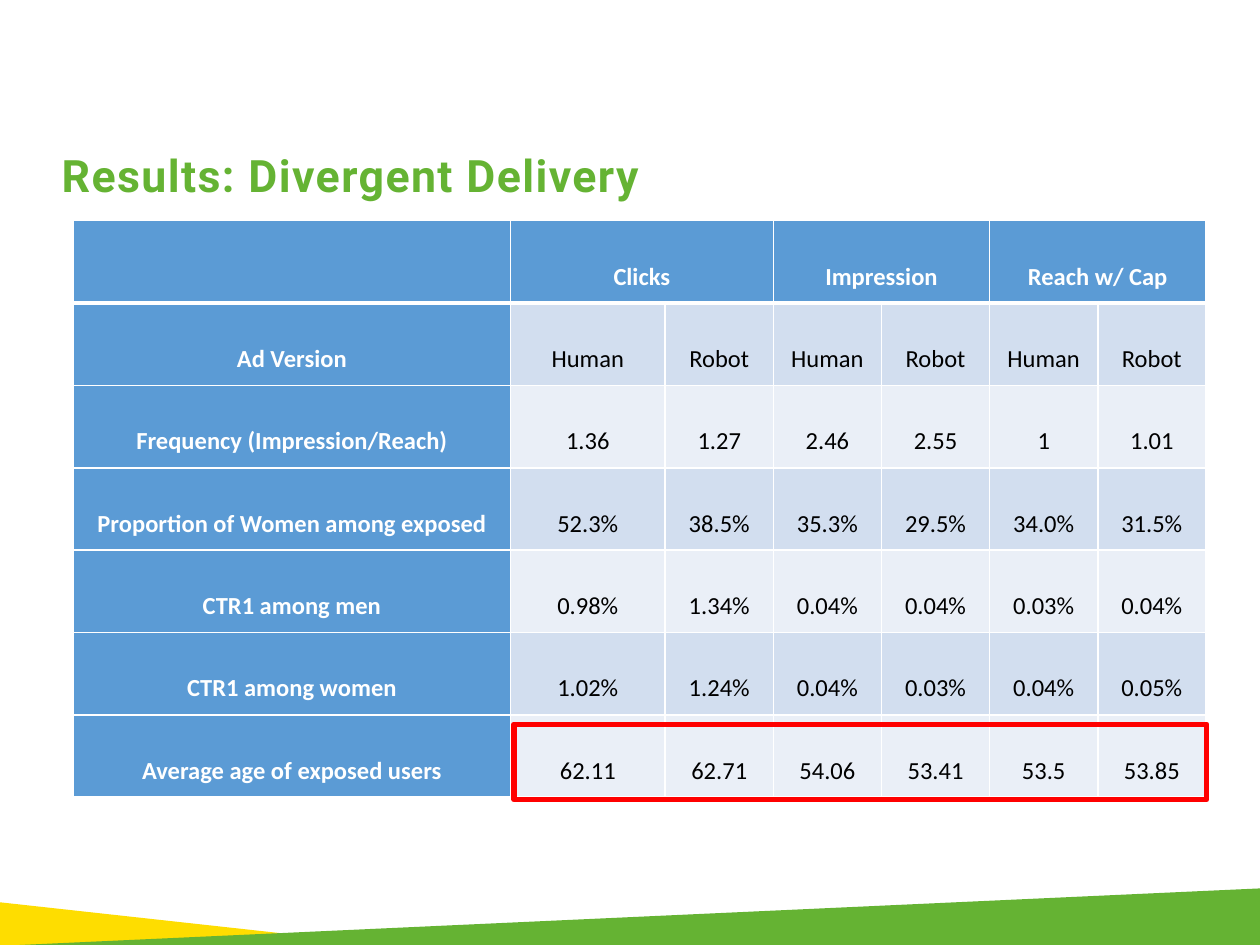
"""Build the "Results: Divergent Delivery" table slide."""
import pptx
import pptx.dml.color
import pptx.enum.shapes
import pptx.enum.text
import pptx.oxml
import pptx.oxml.ns
import pptx.util

Cm, Pt = pptx.util.Cm, pptx.util.Pt
RGBColor = pptx.dml.color.RGBColor
ALIGN = pptx.enum.text.PP_ALIGN
ANCHOR = pptx.enum.text.MSO_ANCHOR

GREEN = RGBColor(0x65, 0xB3, 0x33)
YELLOW = RGBColor(0xFE, 0xDD, 0x00)
BLUE = RGBColor(0x5B, 0x9B, 0xD5)
BANDS = (RGBColor(0xEA, 0xEF, 0xF7), RGBColor(0xD2, 0xDE, 0xEF))
WHITE = RGBColor(0xFF, 0xFF, 0xFF)
BLACK = RGBColor(0, 0, 0)
RED = RGBColor(0xFF, 0, 0)

TITLE = "Results: Divergent Delivery"
GROUPS = ("Clicks", "Impression", "Reach w/ Cap")
VERSIONS = ("Human", "Robot")
ROWS = [
    ("", *(label for group in GROUPS for label in (group, ""))),
    ("Ad Version", *VERSIONS * len(GROUPS)),
    ("Frequency (Impression/Reach)", "1.36", "1.27", "2.46", "2.55", "1", "1.01"),
    ("Proportion of Women among exposed", "52.3%", "38.5%", "35.3%", "29.5%", "34.0%", "31.5%"),
    ("CTR1 among men", "0.98%", "1.34%", "0.04%", "0.04%", "0.03%", "0.04%"),
    ("CTR1 among women", "1.02%", "1.24%", "0.04%", "0.03%", "0.04%", "0.05%"),
    ("Average age of exposed users", "62.11", "62.71", "54.06", "53.41", "53.5", "53.85"),
]
COLUMN_WIDTHS = (8.81, 3.12) + (2.18,) * 5
ROW_HEIGHT = 1.66
TABLE_LEFT, TABLE_TOP = 1.48, 4.45
WEDGES = [
    (YELLOW, [(0, 19.05), (0, 18.19), (7.82, 19.05)]),
    (GREEN, [(25.4, 19.05), (25.4, 17.91), (-0.02, 19.07)]),
]


def add_span(para, text, font_name, size, color, bold):
    span = para.add_run()
    span.text = text
    span.font.name = font_name
    span.font.size = Pt(size)
    span.font.bold = bold
    span.font.color.rgb = color
    return span


def add_wedge(page, color, points):
    corners = [(Cm(x), Cm(y)) for x, y in points]
    builder = page.shapes.build_freeform(*corners[0])
    builder.add_line_segments(corners[1:], close=True)
    wedge = builder.convert_to_shape()
    wedge.shadow.inherit = False
    wedge.fill.solid()
    wedge.fill.fore_color.rgb = color
    wedge.line.fill.background()


def set_borders(cell, row):
    properties = cell._tc.get_or_add_tcPr()
    widths = {"L": 1, "R": 1, "T": 3 if row == 1 else 1, "B": 3 if row == 0 else 1}
    for side, width in widths.items():
        properties.append(pptx.oxml.parse_xml(
            f'<a:ln{side} {pptx.oxml.ns.nsdecls("a")} w="{Pt(width)}">'
            f'<a:solidFill><a:srgbClr val="{WHITE}"/></a:solidFill></a:ln{side}>'))


def fill_cell(cell, row, column, text):
    heading = row == 0 or column == 0
    set_borders(cell, row)
    cell.fill.solid()
    cell.fill.fore_color.rgb = BLUE if heading else BANDS[row % 2]
    cell.vertical_anchor = ANCHOR.MIDDLE
    cell.margin_left = cell.margin_right = Cm(0.18)
    cell.margin_top = cell.margin_bottom = 0
    para = cell.text_frame.paragraphs[0]
    para.alignment = ALIGN.CENTER
    para.line_spacing = 2.0
    if text:
        add_span(para, text, "Calibri", 14, WHITE if heading else BLACK, heading)


def add_title(page):
    box = page.shapes.title
    box.left, box.top, box.width, box.height = Cm(0.99), Cm(2.92), Cm(22.12), Cm(1.52)
    frame = box.text_frame
    frame.auto_size = pptx.enum.text.MSO_AUTO_SIZE.NONE
    frame.word_wrap = True
    frame.vertical_anchor = ANCHOR.TOP
    frame.margin_top = Cm(0.18)
    para = frame.paragraphs[0]
    para.alignment = ALIGN.LEFT
    para.line_spacing = 0.9
    span = add_span(para, TITLE, "Roboto", 25.5, GREEN, True)
    span._r.get_or_add_rPr().set("spc", "80")


def add_results(page):
    table = page.shapes.add_table(
        len(ROWS), len(COLUMN_WIDTHS), Cm(TABLE_LEFT), Cm(TABLE_TOP),
        Cm(sum(COLUMN_WIDTHS)), Cm(ROW_HEIGHT * len(ROWS))).table
    table.first_col = True
    table.horz_banding = False
    for column, width in zip(table.columns, COLUMN_WIDTHS):
        column.width = Cm(width)
    for row, texts in enumerate(ROWS):
        table.rows[row].height = Cm(ROW_HEIGHT)
        for column, text in enumerate(texts):
            fill_cell(table.cell(row, column), row, column, text)
    for first in range(1, len(COLUMN_WIDTHS), len(VERSIONS)):
        table.cell(0, first).merge(table.cell(0, first + len(VERSIONS) - 1))


def add_highlight(page):
    frame = page.shapes.add_shape(
        pptx.enum.shapes.MSO_SHAPE.RECTANGLE, Cm(10.36), Cm(14.6), Cm(13.97), Cm(1.52))
    frame.shadow.inherit = False
    frame.fill.background()
    frame.line.color.rgb = RED
    frame.line.width = Pt(3)


def main():
    deck = pptx.Presentation()
    deck.slide_width, deck.slide_height = Cm(25.4), Cm(19.05)
    page = deck.slides.add_slide(deck.slide_layouts[5])
    for color, points in WEDGES:
        add_wedge(page, color, points)
    add_title(page)
    add_results(page)
    add_highlight(page)
    deck.save("out.pptx")


if __name__ == "__main__":
    main()
